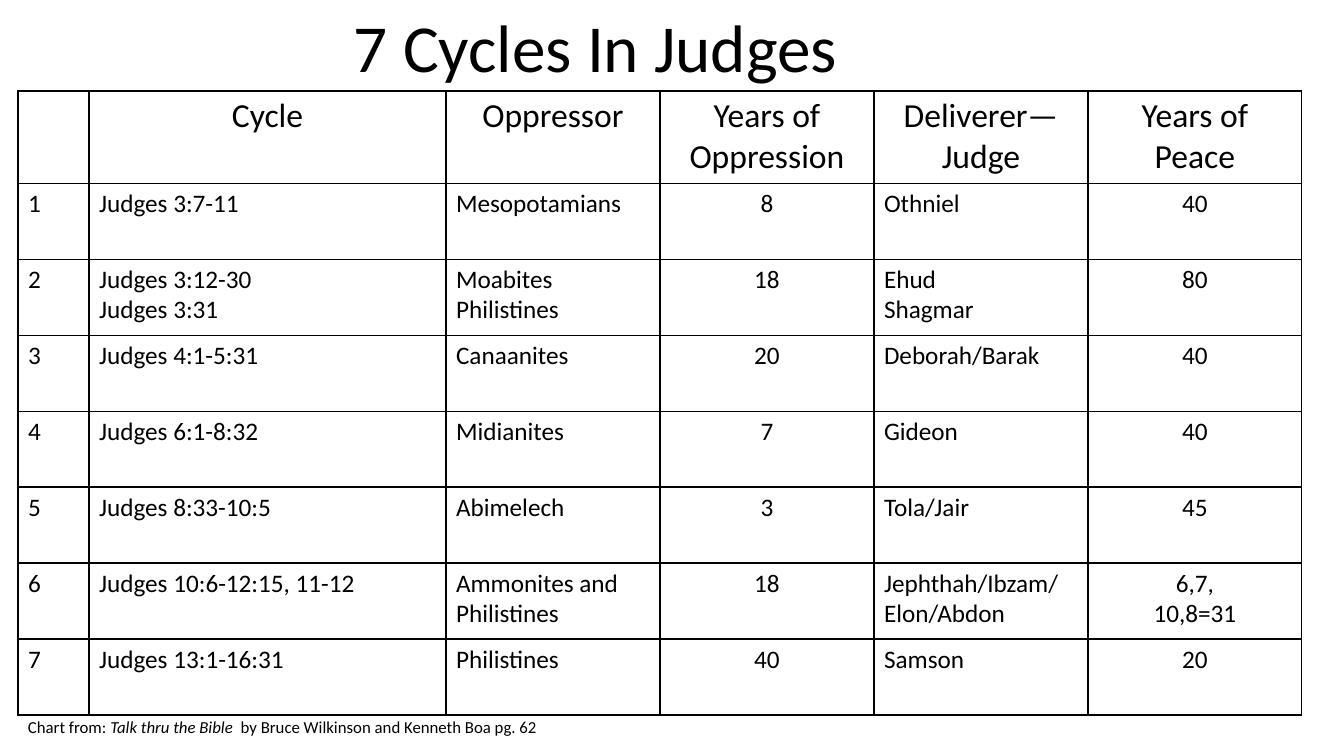
import dataclasses

import lxml.etree
import pptx
import pptx.dml.color
import pptx.enum.text
import pptx.oxml.ns
import pptx.slide
import pptx.table
import pptx.text.text
import pptx.util

PX = 914400 / 100.8
FONT = "Calibri"
COLORS = {"ink": "000000", "page": "FFFFFF"}
CENTER = pptx.enum.text.PP_ALIGN.CENTER
LEFT = pptx.enum.text.PP_ALIGN.LEFT
EDGES = ("a:lnL", "a:lnR", "a:lnT", "a:lnB")


@dataclasses.dataclass(frozen=True)
class Column:
    head: str
    width: int
    align: pptx.enum.text.PP_ALIGN


@dataclasses.dataclass(frozen=True)
class Cycle:
    verses: str
    foe: str
    years: str
    judge: str
    peace: str


@dataclasses.dataclass(frozen=True)
class Phrase:
    text: str
    italic: bool = False


@dataclasses.dataclass(frozen=True)
class Label:
    left: int
    top: int
    width: int
    height: int
    size: int
    phrases: tuple[Phrase, ...]


COLUMNS = (
    Column("", 71, LEFT),
    Column("Cycle", 357, LEFT),
    Column("Oppressor", 214, LEFT),
    Column("Years of Oppression", 214, CENTER),
    Column("Deliverer—Judge", 214, LEFT),
    Column("Years of Peace", 214, CENTER),
)
CYCLES = (
    Cycle("Judges 3:7-11", "Mesopotamians", "8", "Othniel", "40"),
    Cycle("Judges 3:12-30\nJudges 3:31", "Moabites\nPhilistines", "18", "Ehud\nShagmar", "80"),
    Cycle("Judges 4:1-5:31", "Canaanites", "20", "Deborah/Barak", "40"),
    Cycle("Judges 6:1-8:32", "Midianites", "7", "Gideon", "40"),
    Cycle("Judges 8:33-10:5", "Abimelech", "3", "Tola/Jair", "45"),
    Cycle("Judges 10:6-12:15, 11-12", "Ammonites and Philistines", "18",
          "Jephthah/Ibzam/\nElon/Abdon", "6,7,\n10,8=31"),
    Cycle("Judges 13:1-16:31", "Philistines", "40", "Samson", "20"),
)
LABELS = (
    Label(344, 0, 631, 92, 48, (Phrase("7 Cycles In Judges"),)),
    Label(18, 712, 849, 30, 12, (
        Phrase("Chart from: "),
        Phrase("Talk thru the Bible ", True),
        Phrase(" by Bruce Wilkinson and Kenneth Boa pg. 62"),
    )),
)


def px(count: int) -> pptx.util.Emu:
    return pptx.util.Emu(round(count * PX))


def color(name: str) -> pptx.dml.color.RGBColor:
    return pptx.dml.color.RGBColor.from_string(COLORS[name])


def style(font: pptx.text.text.Font, size: int) -> None:
    font.name = FONT
    font.size = pptx.util.Pt(size)
    font.color.rgb = color("ink")


def border(cell: pptx.table._Cell) -> None:
    props = cell._tc.get_or_add_tcPr()
    qn = pptx.oxml.ns.qn
    for spot, edge in enumerate(EDGES):
        line = lxml.etree.Element(qn(edge), w=str(pptx.util.Pt(1)))
        fill = lxml.etree.SubElement(line, qn("a:solidFill"))
        lxml.etree.SubElement(fill, qn("a:srgbClr"), val=COLORS["ink"])
        props.insert(spot, line)


def write(cell: pptx.table._Cell, text: str, size: int, align: pptx.enum.text.PP_ALIGN) -> None:
    cell.text_frame.text = text
    cell.fill.solid()
    cell.fill.fore_color.rgb = color("page")
    for para in cell.text_frame.paragraphs:
        para.alignment = align
        style(para.font, size)
        for run in para.runs:
            style(run.font, size)
    border(cell)


def draw_table(slide: pptx.slide.Slide) -> None:
    count = len(CYCLES) + 1
    width = sum(column.width for column in COLUMNS)
    frame = slide.shapes.add_table(
        count, len(COLUMNS), px(18), px(91), px(width), px(76 * count))
    table = frame.table
    table.first_row = False
    table.horz_banding = False
    table.rows[0].height = px(92)
    for col, column in enumerate(COLUMNS):
        table.columns[col].width = px(column.width)
        write(table.cell(0, col), column.head, 24, CENTER)
    for row, cycle in enumerate(CYCLES, 1):
        values = (str(row), *dataclasses.astuple(cycle))
        for col, (column, value) in enumerate(zip(COLUMNS, values)):
            write(table.cell(row, col), value, 18, column.align)


def draw_label(slide: pptx.slide.Slide, label: Label) -> None:
    box = slide.shapes.add_textbox(
        px(label.left), px(label.top), px(label.width), px(label.height))
    frame = box.text_frame
    frame.word_wrap = True
    frame.auto_size = pptx.enum.text.MSO_AUTO_SIZE.SHAPE_TO_FIT_TEXT
    for phrase in label.phrases:
        run = frame.paragraphs[0].add_run()
        run.text = phrase.text
        run.font.italic = phrase.italic
        style(run.font, label.size)


def main() -> None:
    deck = pptx.Presentation()
    deck.slide_width = px(1344)
    deck.slide_height = px(756)
    slide = deck.slides.add_slide(deck.slide_layouts[6])
    draw_table(slide)
    for label in LABELS:
        draw_label(slide, label)
    deck.save("out.pptx")


if __name__ == "__main__":
    main()
